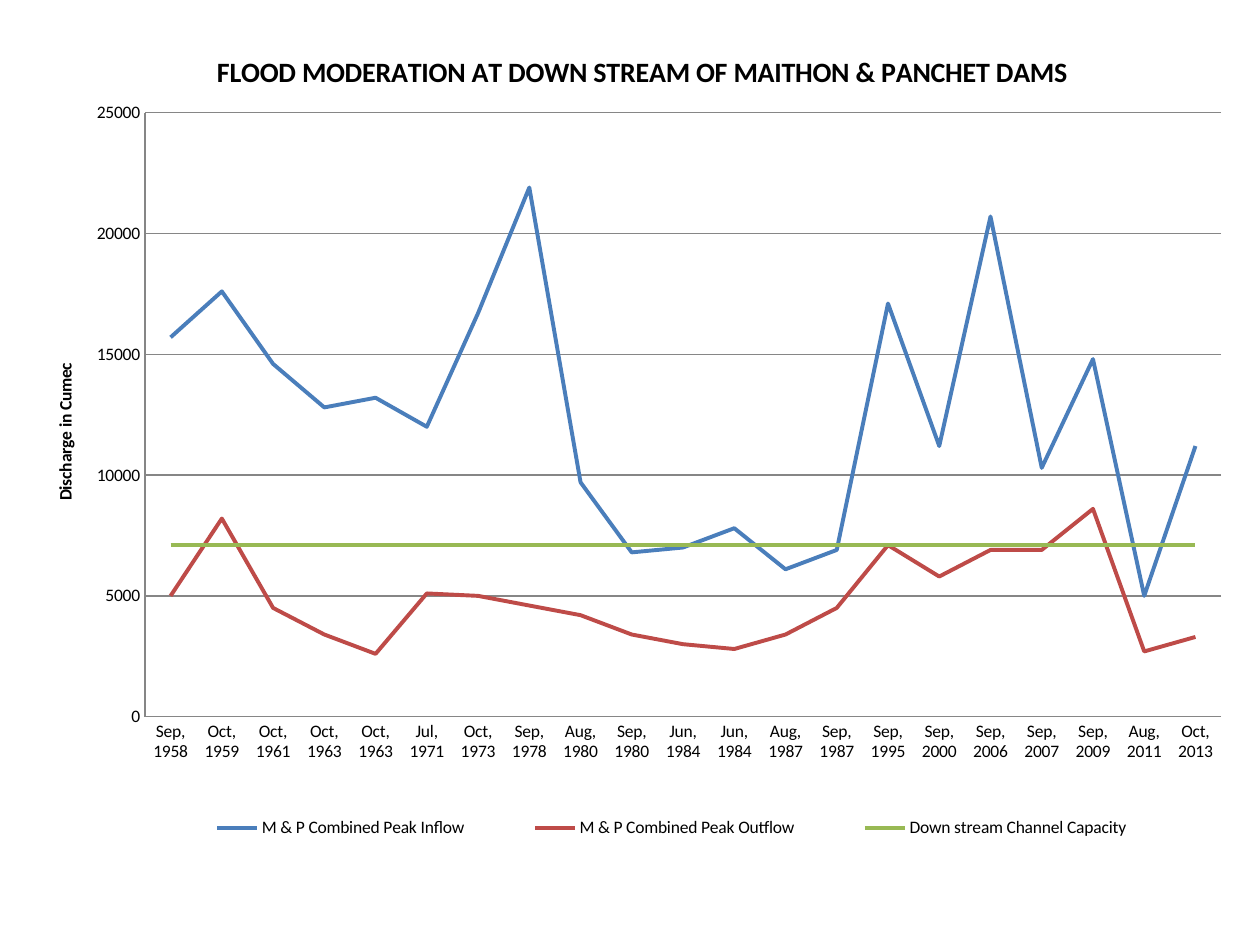
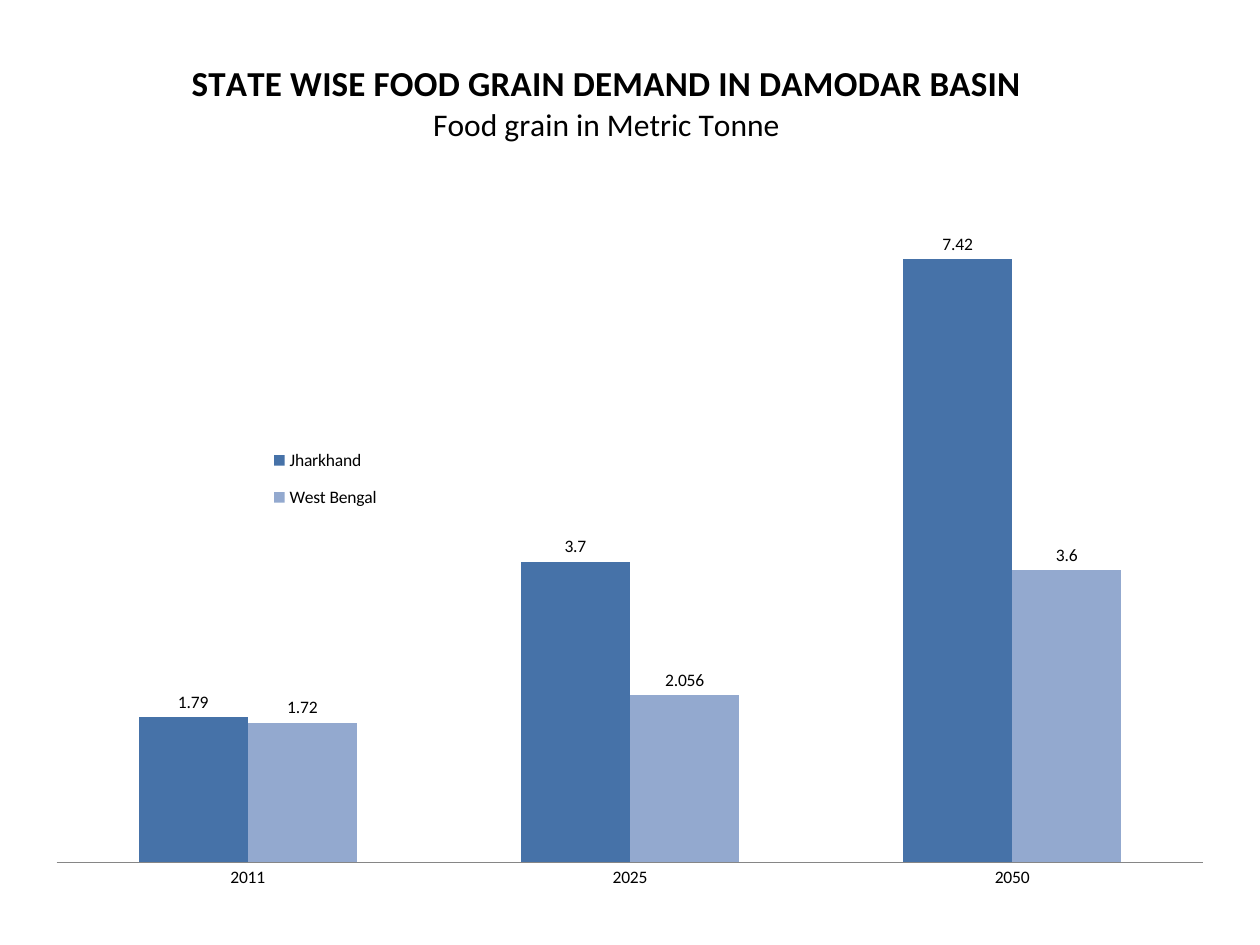
from lxml import etree
from pptx import Presentation
from pptx import util as u
from pptx.chart.data import CategoryChartData
from pptx.dml.color import RGBColor
from pptx.enum import chart as ch
from pptx.oxml.ns import qn

BLACK = RGBColor(0, 0, 0)
GREY = RGBColor(0x86, 0x86, 0x86)
INFLOW = RGBColor(0x4A, 0x7E, 0xBB)
OUTFLOW = RGBColor(0xBE, 0x4B, 0x48)
CAPACITY = RGBColor(0x98, 0xB9, 0x54)
JHARKHAND = RGBColor(0x46, 0x72, 0xA8)
WEST_BENGAL = RGBColor(0x93, 0xA9, 0xCF)
FONT = "Calibri"
WIDTH, HEIGHT = 10, 7.5
MARGIN_X, MARGIN_Y = 0.26, 0.31

FLOODS = [
    ("Sep, 1958", 15700, 5000), ("Oct, 1959", 17600, 8200),
    ("Oct, 1961", 14600, 4500), ("Oct, 1963", 12800, 3400),
    ("Oct, 1963", 13200, 2600), ("Jul, 1971", 12000, 5100),
    ("Oct, 1973", 16700, 5000), ("Sep, 1978", 21900, 4600),
    ("Aug, 1980", 9700, 4200), ("Sep, 1980", 6800, 3400),
    ("Jun, 1984", 7000, 3000), ("Jun, 1984", 7800, 2800),
    ("Aug, 1987", 6100, 3400), ("Sep, 1987", 6900, 4500),
    ("Sep, 1995", 17100, 7100), ("Sep, 2000", 11200, 5800),
    ("Sep, 2006", 20700, 6900), ("Sep, 2007", 10300, 6900),
    ("Sep, 2009", 14800, 8600), ("Aug, 2011", 5000, 2700),
    ("Oct, 2013", 11200, 3300),
]
CHANNEL_CAPACITY = 7100
MONTHS, INFLOWS, OUTFLOWS = zip(*FLOODS)

FLOOD_CHART = dict(
    kind=ch.XL_CHART_TYPE.LINE,
    title=[("FLOOD MODERATION AT DOWN STREAM OF MAITHON & PANCHET DAMS", 16, True)],
    cats=MONTHS,
    series=[("M & P Combined Peak Inflow", INFLOWS, INFLOW),
            ("M & P Combined Peak Outflow", OUTFLOWS, OUTFLOW),
            ("Down stream Channel Capacity", [CHANNEL_CAPACITY] * len(FLOODS), CAPACITY)],
    legend=ch.XL_LEGEND_POSITION.RIGHT,
    top=25000,
    layout={"c:chart/c:title": (0.15, 0.01),
            "c:chart/c:plotArea": (0.094, 0.085, 0.901, 0.697),
            "c:chart/c:legend": (0.1, 0.88, 0.87, 0.06)},
)
GRAIN_CHART = dict(
    kind=ch.XL_CHART_TYPE.COLUMN_CLUSTERED,
    title=[("STATE WISE FOOD GRAIN DEMAND IN DAMODAR BASIN", 20, True),
           ("Food grain in Metric Tonne", 18, False)],
    cats=["2011", "2025", "2050"],
    series=[("Jharkhand", [1.79, 3.7, 7.42], JHARKHAND),
            ("West Bengal", [1.72, 2.056, 3.6], WEST_BENGAL)],
    legend=ch.XL_LEGEND_POSITION.TOP,
    top=8,
    layout={"c:chart/c:title": (0.13, 0.02),
            "c:chart/c:plotArea": (0.02, 0.2, 0.96, 0.75),
            "c:chart/c:legend": (0.18, 0.455, 0.13, 0.105)},
)


def place(chart, where, shares):
    el = chart.element.xpath(where)[0]
    for old in el.findall(qn("c:layout")):
        el.remove(old)
    layout = etree.Element(qn("c:layout"))
    manual = etree.SubElement(layout, qn("c:manualLayout"))
    if where.endswith("plotArea"):
        etree.SubElement(manual, qn("c:layoutTarget")).set("val", "inner")
    for tag in ("xMode", "yMode"):
        etree.SubElement(manual, qn("c:" + tag)).set("val", "edge")
    for tag, share in zip("xywh", shares):
        etree.SubElement(manual, qn("c:" + tag)).set("val", str(share))
    overlay = el.find(qn("c:overlay"))
    if overlay is None:
        el.insert(0, layout)
    else:
        overlay.addprevious(layout)


def write(tf, lines):
    for i, (line, size, bold) in enumerate(lines):
        p = tf.paragraphs[0] if i == 0 else tf.add_paragraph()
        p.text = line
        f = p.runs[0].font
        f.name, f.size, f.bold = FONT, u.Pt(size), bold
        f.color.rgb = BLACK


def add_chart_slide(prs, content):
    s = prs.slides.add_slide(prs.slide_layouts[6])
    data = CategoryChartData()
    data.categories = content["cats"]
    for name, values, _ in content["series"]:
        data.add_series(name, values)
    chart = s.shapes.add_chart(
        content["kind"], u.Inches(MARGIN_X), u.Inches(MARGIN_Y),
        u.Inches(WIDTH - 2 * MARGIN_X), u.Inches(HEIGHT - 2 * MARGIN_Y), data).chart
    chart.font.name, chart.font.size = FONT, u.Pt(10)
    chart.font.color.rgb = BLACK
    write(chart.chart_title.text_frame, content["title"])
    chart.has_legend = True
    chart.legend.position = content["legend"]
    chart.legend.include_in_layout = False
    chart.plots[0].vary_by_categories = False
    for axis in (chart.category_axis, chart.value_axis):
        axis.major_tick_mark = axis.minor_tick_mark = ch.XL_TICK_MARK.NONE
        axis.format.line.color.rgb = GREY
    chart.value_axis.minimum_scale = 0
    chart.value_axis.maximum_scale = content["top"]
    for where, shares in content["layout"].items():
        place(chart, where, shares)
    return chart


def add_flood_slide(prs):
    chart = add_chart_slide(prs, FLOOD_CHART)
    for series, (_, _, color) in zip(chart.plots[0].series, FLOOD_CHART["series"]):
        series.smooth = False
        series.format.line.color.rgb = color
        series.format.line.width = u.Pt(2.25)
    axis = chart.value_axis
    axis.major_unit = 5000
    axis.major_gridlines.format.line.color.rgb = GREY
    axis.tick_labels.number_format = "0"
    axis.tick_labels.number_format_is_linked = False
    write(axis.axis_title.text_frame, [("Discharge in Cumec", 10, True)])
    place(chart, ".//c:valAx/c:title", (0.015, 0.37))


def add_grain_slide(prs):
    chart = add_chart_slide(prs, GRAIN_CHART)
    chart.value_axis.visible = False
    chart.value_axis.has_major_gridlines = False
    plot = chart.plots[0]
    plot.gap_width, plot.overlap = 150, 0
    for series, (_, _, color) in zip(plot.series, GRAIN_CHART["series"]):
        series.format.fill.solid()
        series.format.fill.fore_color.rgb = color
        labels = series.data_labels
        labels.show_value = True
        labels.position = ch.XL_LABEL_POSITION.OUTSIDE_END


def main():
    prs = Presentation()
    prs.slide_width, prs.slide_height = u.Inches(WIDTH), u.Inches(HEIGHT)
    add_flood_slide(prs)
    add_grain_slide(prs)
    prs.save("out.pptx")


if __name__ == "__main__":
    main()
